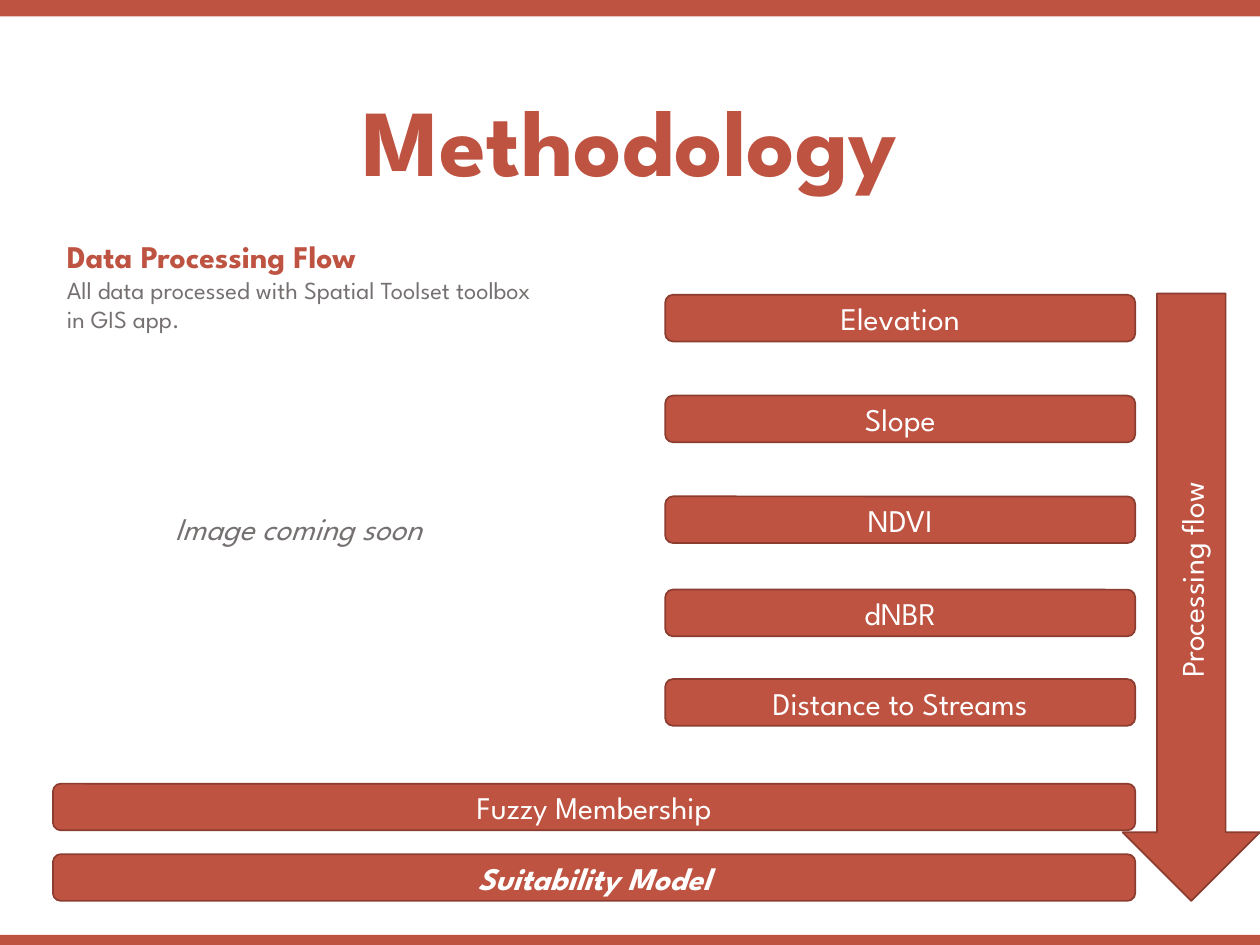
from dataclasses import dataclass

from lxml import etree
from pptx import Presentation
from pptx.dml.color import RGBColor
from pptx.enum import shapes, text
from pptx.oxml import ns
from pptx.util import Inches, Pt

FONT = "League Spartan"
BRICK = RGBColor(0xBE, 0x53, 0x41)
DARK_BRICK = RGBColor(0x8D, 0x3D, 0x30)
GRAY = RGBColor(0x76, 0x71, 0x71)
WHITE = RGBColor(0xFF, 0xFF, 0xFF)

BAR_HEIGHT = 0.37
RIGHT_EDGE = 9.01
DATA_LEFT = 5.28
FULL_LEFT = 0.42


@dataclass(frozen=True)
class FlowBar:
    label: str
    left: float
    top: float
    emphasized: bool = False


FLOW_BARS = [
    FlowBar("Elevation", DATA_LEFT, 2.34),
    FlowBar("Slope", DATA_LEFT, 3.14),
    FlowBar("NDVI", DATA_LEFT, 3.94),
    FlowBar("dNBR", DATA_LEFT, 4.68),
    FlowBar("Distance to Streams", DATA_LEFT, 5.39),
    FlowBar("Fuzzy Membership", FULL_LEFT, 6.22),
    FlowBar("Suitability Model", FULL_LEFT, 6.78, emphasized=True),
]


def style_font(font, size: float, color: RGBColor, bold=False, italic=False) -> None:
    font.name = FONT
    font.size = Pt(size)
    font.color.rgb = color
    font.bold = bold
    font.italic = italic


def place(shape, left: float, top: float, width: float, height: float) -> None:
    shape.left, shape.top = Inches(left), Inches(top)
    shape.width, shape.height = Inches(width), Inches(height)


def add_block(slide, kind, left: float, top: float, width: float, height: float):
    shape = slide.shapes.add_shape(
        kind, Inches(left), Inches(top), Inches(width), Inches(height))
    shape.shadow.inherit = False
    shape.fill.solid()
    shape.fill.fore_color.rgb = BRICK
    return shape


def add_band(slide, top: float, height: float) -> None:
    band = add_block(slide, shapes.MSO_SHAPE.RECTANGLE, 0, top, 10, height)
    band.line.fill.background()


def add_labeled_block(slide, kind, label: str, left: float, top: float,
                      width: float, height: float, emphasized=False):
    shape = add_block(slide, kind, left, top, width, height)
    shape.line.color.rgb = DARK_BRICK
    shape.line.width = Pt(1)
    frame = shape.text_frame
    frame.vertical_anchor = text.MSO_ANCHOR.MIDDLE
    paragraph = frame.paragraphs[0]
    paragraph.text = label
    paragraph.alignment = text.PP_ALIGN.CENTER
    style_font(paragraph.font, 18, WHITE, emphasized, emphasized)
    return shape


def fill_title(title) -> None:
    place(title, 0.35, 0.6, 9.3, 1.01)
    frame = title.text_frame
    frame.auto_size = text.MSO_AUTO_SIZE.NONE
    frame.vertical_anchor = text.MSO_ANCHOR.BOTTOM
    paragraph = frame.paragraphs[0]
    paragraph.text = "Methodology"
    paragraph.alignment = text.PP_ALIGN.CENTER
    paragraph.line_spacing = 0.9
    paragraph.space_before = Pt(10)
    style_font(paragraph.font, 54, BRICK, bold=True)


def fill_introduction(body) -> None:
    place(body, 0.43, 1.83, 3.9, 0.88)
    frame = body.text_frame
    frame.auto_size = text.MSO_AUTO_SIZE.NONE
    paragraph = frame.paragraphs[0]
    paragraph.space_before = Pt(10)
    heading = paragraph.add_run()
    heading.text = "Data Processing Flow"
    style_font(heading.font, 18, BRICK, bold=True)
    paragraph.add_line_break()
    detail = paragraph.add_run()
    detail.text = "All data processed with Spatial Toolset toolbox in GIS app."
    style_font(detail.font, 14, GRAY)
    # Plain paragraph without bullet or hanging indent
    properties = paragraph._p.get_or_add_pPr()
    properties.set("marL", "0")
    properties.set("indent", "0")
    etree.SubElement(properties, ns.qn("a:buNone"))


def add_image_note(slide) -> None:
    note = slide.shapes.add_textbox(
        Inches(1.29), Inches(3.38), Inches(2.65), Inches(1.01))
    frame = note.text_frame
    frame.word_wrap = True
    frame.vertical_anchor = text.MSO_ANCHOR.BOTTOM
    paragraph = frame.paragraphs[0]
    paragraph.text = "Image coming soon"
    style_font(paragraph.font, 18, GRAY, italic=True)


def main() -> None:
    presentation = Presentation()
    presentation.slide_width = Inches(10)
    presentation.slide_height = Inches(7.5)
    slide = presentation.slides.add_slide(presentation.slide_layouts[1])

    # Top and bottom bands
    add_band(slide, 0, 0.13)
    add_band(slide, 7.42, 0.08)

    # Title and introduction
    fill_title(slide.shapes.title)
    fill_introduction(slide.placeholders[1])

    # Processing arrow, read from bottom to top
    arrow = add_labeled_block(slide, shapes.MSO_SHAPE.DOWN_ARROW,
                              "Processing flow", 8.91, 2.33, 1.09, 4.82)
    arrow.text_frame._txBody.bodyPr.set("vert", "vert270")

    # Data layers and model steps
    for bar in FLOW_BARS:
        add_labeled_block(slide, shapes.MSO_SHAPE.ROUNDED_RECTANGLE, bar.label,
                          bar.left, bar.top, RIGHT_EDGE - bar.left, BAR_HEIGHT,
                          bar.emphasized)

    add_image_note(slide)
    presentation.save("out.pptx")


if __name__ == "__main__":
    main()
